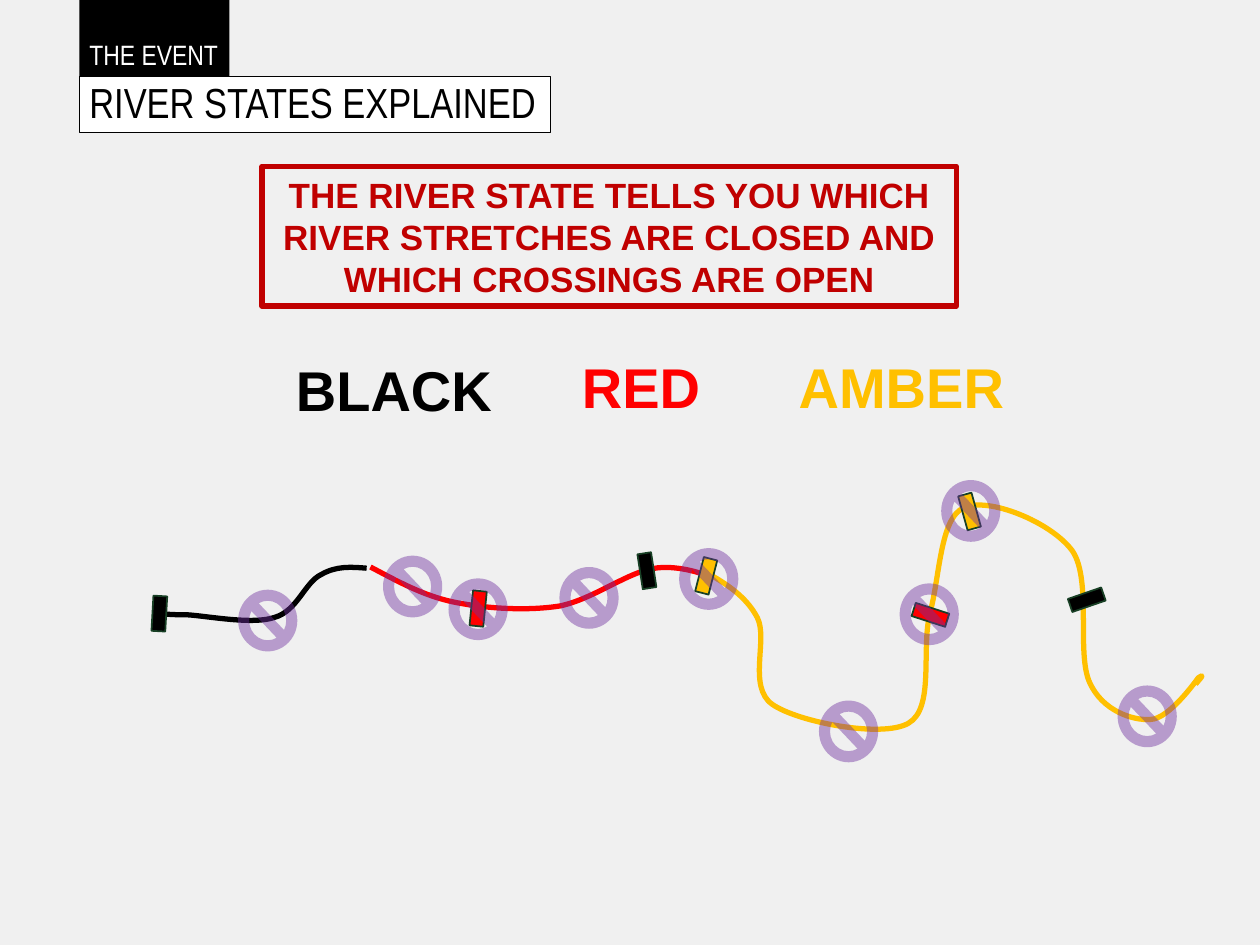
from lxml.etree import SubElement
from pptx import Presentation
from pptx.dml.color import RGBColor
from pptx.enum.shapes import MSO_SHAPE
from pptx.enum.text import MSO_ANCHOR, MSO_AUTO_SIZE, PP_ALIGN
from pptx.oxml.ns import qn
from pptx.util import Inches, Pt

COLOURS = {
    "background": "F0F0F0", "white": "FFFFFF", "black": "000000", "red": "FF0000",
    "amber": "FFC000", "notice": "C00000", "outline": "184025", "closed": "7030A0",
}
NOTICE = [
    "THE RIVER STATE TELLS YOU WHICH",
    "RIVER STRETCHES ARE CLOSED AND",
    "WHICH CROSSINGS ARE OPEN",
]
STATES = [("AMBER", "amber", 6.24, 2.75), ("RED", "red", 4.52, 2.75), ("BLACK", "black", 2.25, 2.77)]
STRETCHES = [
    ("red", [
        (2.94, 4.5), (3.15, 4.61), (3.36, 4.73), (3.61, 4.78), (3.86, 4.83), (4.18, 4.85),
        (4.44, 4.81), (4.69, 4.76), (4.96, 4.56), (5.15, 4.52), (5.33, 4.47), (5.56, 4.55),
        (5.56, 4.55),
    ]),
    ("amber", [
        (5.6, 4.54), (5.76, 4.63), (5.92, 4.73), (6.01, 4.9), (6.1, 5.07), (5.93, 5.45),
        (6.13, 5.59), (6.33, 5.73), (7, 5.86), (7.21, 5.74), (7.42, 5.62), (7.31, 5.16),
        (7.38, 4.87), (7.46, 4.58), (7.46, 4.11), (7.65, 4.03), (7.84, 3.94), (8.34, 4.14),
        (8.51, 4.37), (8.67, 4.6), (8.54, 5.19), (8.65, 5.42), (8.75, 5.64), (8.99, 5.72),
        (9.13, 5.71), (9.28, 5.71), (9.51, 5.38), (9.51, 5.38), (9.57, 5.34), (9.53, 5.38),
        (9.49, 5.43),
    ]),
    ("black", [
        (2.91, 4.51), (2.79, 4.5), (2.67, 4.49), (2.55, 4.56), (2.42, 4.62), (2.36, 4.85),
        (2.18, 4.9), (2.01, 4.96), (1.65, 4.89), (1.49, 4.88), (1.33, 4.88), (1.29, 4.87),
        (1.24, 4.87),
    ]),
]
CROSSINGS = [
    ("amber", 7.64, 3.92, 344.4), ("amber", 5.55, 4.43, 14.3), ("black", 8.57, 4.62, 71),
    ("red", 3.74, 4.69, 5.7), ("black", 1.21, 4.73, 3.2), ("red", 7.33, 4.74, 287.9),
    ("black", 5.08, 4.39, 351.2),
]
CLOSURES = [
    (6.5, 5.56), (8.87, 5.44), (3.56, 4.59), (4.44, 4.5), (3.04, 4.41),
    (5.39, 4.35), (7.47, 3.81), (1.89, 4.68), (7.14, 4.63),
]


def colour(name):
    return RGBColor.from_string(COLOURS[name])


def paint(shape, fill=None, line=None, width=1):
    if fill:
        shape.fill.solid()
        shape.fill.fore_color.rgb = colour(fill)
    else:
        shape.fill.background()
    if line:
        shape.line.color.rgb = colour(line)
        shape.line.width = Pt(width)
    else:
        shape.line.fill.background()


def add_shape(slide, kind, left, top, width, height):
    shape = slide.shapes.add_shape(kind, Inches(left), Inches(top), Inches(width), Inches(height))
    shape.shadow.inherit = False
    return shape


def write(box, lines, size, font, name, bold=False, align=PP_ALIGN.LEFT, spacing=None):
    frame = box.text_frame
    for index, line in enumerate(lines):
        para = frame.add_paragraph() if index else frame.paragraphs[0]
        para.alignment = align
        if spacing:
            para.line_spacing = spacing
        span = para.add_run()
        span.text = line
        span.font.size = Pt(size)
        span.font.name = font
        span.font.bold = bold
        span.font.color.rgb = colour(name)


def write_heading(box, text, size, name, anchor, margin):
    frame = box.text_frame
    frame.word_wrap = False
    frame.auto_size = MSO_AUTO_SIZE.SHAPE_TO_FIT_TEXT
    frame.vertical_anchor = anchor
    frame.margin_left = frame.margin_right = Inches(0.08)
    frame.margin_top = frame.margin_bottom = Inches(margin)
    write(box, [text], size, "Arial Narrow", name, spacing=0.9)


def add_stretch(slide, name, points):
    corners = [(Inches(x), Inches(y)) for x, y in points]
    builder = slide.shapes.build_freeform(*corners[0])
    builder.add_line_segments(corners[1:], close=False)
    river = builder.convert_to_shape()
    river.shadow.inherit = False
    paint(river, line=name, width=3)
    outline = next(river.element.iter(qn("a:path")))
    segments = outline.findall(qn("a:lnTo"))
    for start in range(0, len(segments), 3):
        curve = SubElement(outline, qn("a:cubicBezTo"))
        for segment in segments[start:start + 3]:
            curve.append(segment[0])
            outline.remove(segment)


def main():
    deck = Presentation()
    deck.slide_width, deck.slide_height = Inches(10), Inches(7.5)
    page = deck.slides.add_slide(deck.slide_layouts[5])
    page.background.fill.solid()
    page.background.fill.fore_color.rgb = colour("background")

    title = page.shapes.title
    title.left, title.top, title.width, title.height = map(Inches, (0.63, 0.28, 1.19, 0.34))
    paint(title, "black")
    write_heading(title, "THE EVENT", 16, "white", MSO_ANCHOR.BOTTOM, 0.05)

    subtitle = add_shape(page, MSO_SHAPE.RECTANGLE, 0.63, 0.61, 3.74, 0.44)
    paint(subtitle, "white", "black", 0.75)
    write_heading(subtitle, "RIVER STATES EXPLAINED", 24, "black", MSO_ANCHOR.MIDDLE, 0.04)

    notice = add_shape(page, MSO_SHAPE.RECTANGLE, 2.08, 1.32, 5.51, 1.11)
    paint(notice, line="notice", width=3)
    notice.text_frame.word_wrap = True
    notice.text_frame.vertical_anchor = MSO_ANCHOR.MIDDLE
    write(notice, NOTICE, 20, "Arial", "notice", True, PP_ALIGN.CENTER)

    for text, name, left, top in STATES:
        label = page.shapes.add_textbox(Inches(left), Inches(top), Inches(1.98), Inches(0.64))
        label.text_frame.word_wrap = True
        write(label, [text], 32, "Arial", name, True)

    for name, points in STRETCHES:
        add_stretch(page, name, points)

    for name, left, top, angle in CROSSINGS:
        crossing = add_shape(page, MSO_SHAPE.RECTANGLE, left, top, 0.11, 0.28)
        crossing.rotation = angle
        paint(crossing, name, "outline")

    for left, top in CLOSURES:
        closure = add_shape(page, MSO_SHAPE.NO_SYMBOL, left, top, 0.47, 0.49)
        paint(closure, "closed")
        tint = next(closure.element.spPr.iter(qn("a:srgbClr")))
        SubElement(tint, qn("a:alpha"), val="44000")

    deck.save("out.pptx")


if __name__ == "__main__":
    main()
